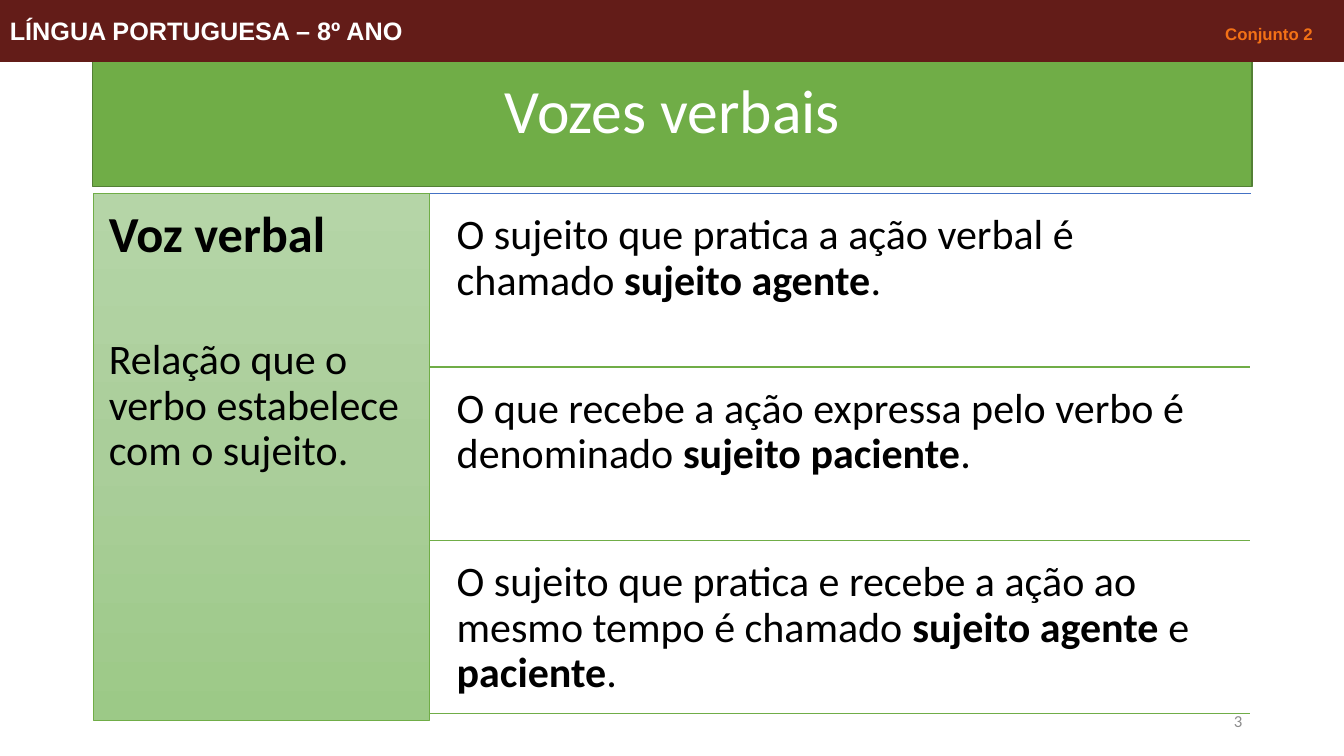
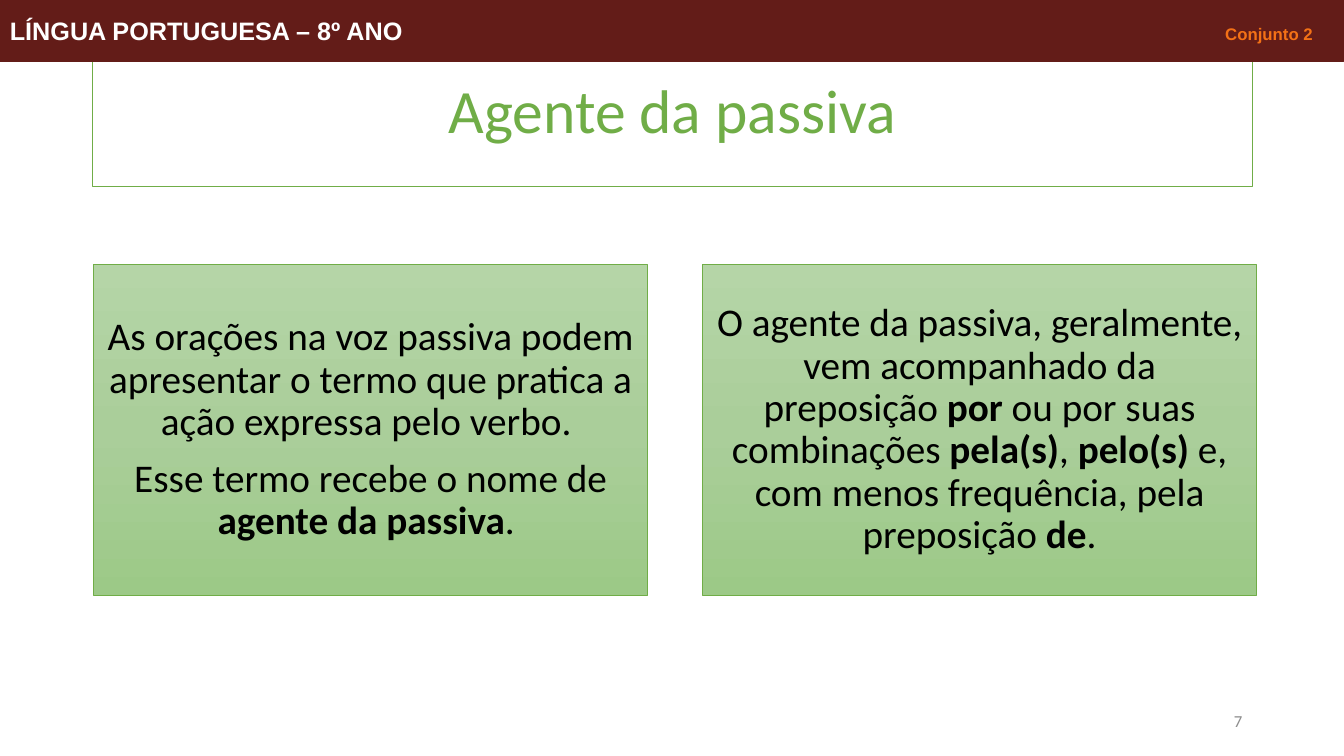
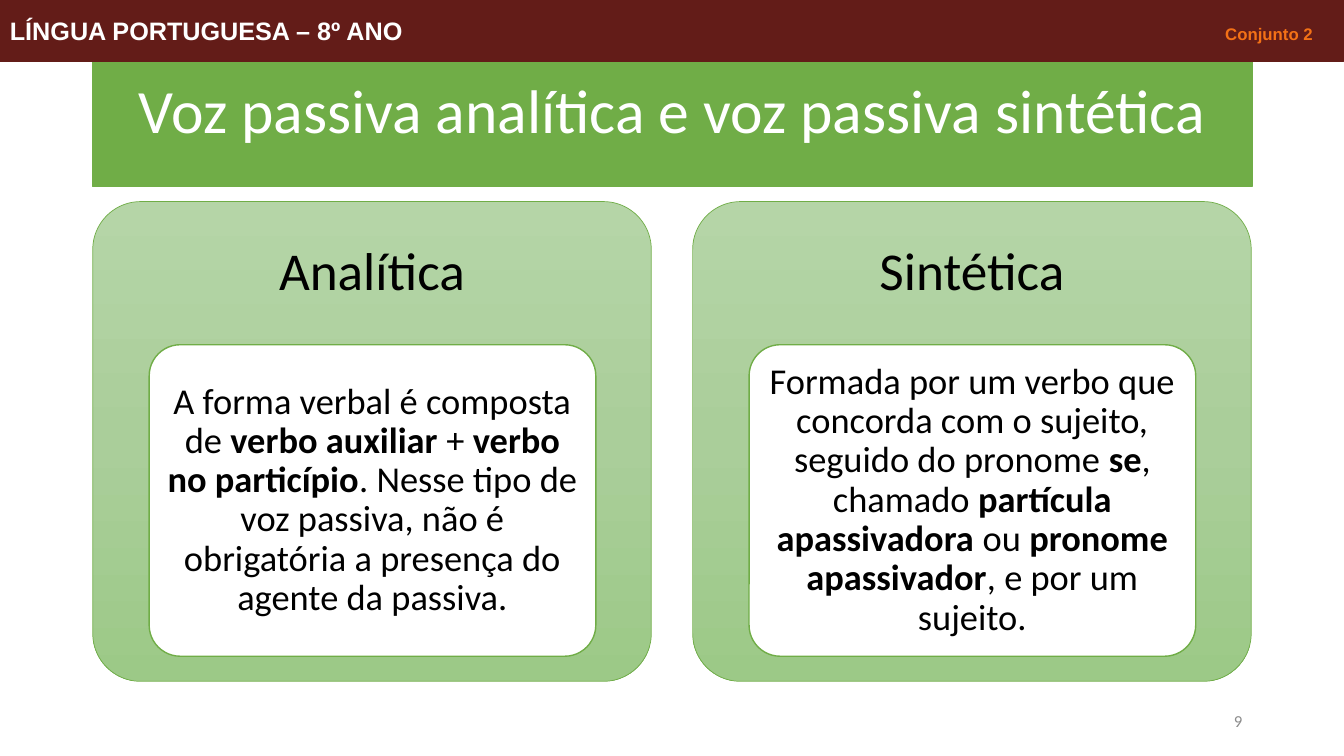
from lxml.etree import SubElement
from pptx import Presentation
from pptx.dml.color import RGBColor
from pptx.enum.shapes import MSO_CONNECTOR as Connector, MSO_SHAPE as Shape
from pptx.enum.text import MSO_ANCHOR as Anchor, PP_ALIGN as Align
from pptx.oxml.ns import qn
from pptx.util import Pt

PX = 9144
WIDTH, HEIGHT = 1333, 750
COLORS = {
    "band": "631C18",
    "set": "F47116",
    "green": "70AD47",
    "dark_green": "538035",
    "blue": "4472C4",
    "number": "8C8C8C",
    "white": "FFFFFF",
    "black": "000000",
}
CARD_STOPS = {0: "B5D5A7", 50000: "AACE9A", 100000: "9CC987"}


def rgb(name):
    return RGBColor.from_string(COLORS[name])


def emu(*lengths):
    return [length * PX for length in lengths]


def fill_gradient(shape):
    shape.fill.gradient()
    shape.fill.gradient_angle = 270
    stops = shape._element.spPr.find(".//" + qn("a:gsLst"))
    stops.clear()
    for position, color in CARD_STOPS.items():
        stop = SubElement(stops, qn("a:gs"), pos=str(position))
        SubElement(stop, qn("a:srgbClr"), val=color)


def set_frame(box, inset, anchor):
    frame = box.text_frame
    frame.word_wrap = True
    frame.vertical_anchor = anchor
    frame.margin_left = frame.margin_right = inset[0] * PX
    frame.margin_top = frame.margin_bottom = inset[1] * PX


def add_panel(page, place, fill=None, line="green", weight=1, kind=Shape.RECTANGLE,
              inset=(10, 5), anchor=Anchor.MIDDLE):
    panel = page.shapes.add_shape(kind, *emu(*place))
    panel.shadow.inherit = False
    if kind == Shape.ROUNDED_RECTANGLE:
        panel.adjustments[0] = 0.1
    if fill == "card":
        fill_gradient(panel)
    elif fill:
        panel.fill.solid()
        panel.fill.fore_color.rgb = rgb(fill)
    else:
        panel.fill.background()
    panel.line.color.rgb = rgb(line)
    panel.line.width = Pt(weight)
    set_frame(panel, inset, anchor)
    return panel


def add_label(page, place, inset=(10, 5), anchor=Anchor.MIDDLE):
    label = page.shapes.add_textbox(*emu(*place))
    set_frame(label, inset, anchor)
    return label


def write(box, text, size, color="black", font="Calibri", bold=False,
          align=Align.LEFT, spacing=0.9, before=0, after=10):
    frame = box.text_frame
    para = frame.add_paragraph() if frame.text else frame.paragraphs[0]
    para.alignment = align
    para.line_spacing = spacing
    para.space_before = Pt(before)
    para.space_after = Pt(after)
    for index, part in enumerate(text.split("*")):
        if part:
            span = para.add_run()
            span.text = part
            span.font.name = font
            span.font.size = Pt(size)
            span.font.bold = bold or index % 2 == 1
            span.font.color.rgb = rgb(color)


def add_rule(page, left, right, top, color="green"):
    rule = page.shapes.add_connector(Connector.STRAIGHT, *emu(left, top, right, top))
    rule.line.color.rgb = rgb(color)
    rule.line.width = Pt(1)
    SubElement(rule._element.spPr, qn("a:effectLst"))


def add_page(deck, title, fill="green", line="green", weight=1, color="white"):
    page = deck.slides.add_slide(deck.slide_layouts[6])
    heading = add_panel(page, (92, 40, 1150, 145), fill, line, weight)
    write(heading, title, 44, color, align=Align.CENTER, after=0)
    return page


def add_frame(page, number):
    footer = add_label(page, (942, 695, 300, 40))
    write(footer, str(number), 12, "number", align=Align.RIGHT, spacing=1, after=0)
    band = add_panel(page, (0, 0, WIDTH, 61), "band", "band", 0.75)
    write(band, "LÍNGUA PORTUGUESA – 8º ANO", 18, "white", "Arial", True, spacing=1, after=0)
    label = add_label(page, (1112, 3, 200, 61))
    write(label, "Conjunto 2", 12, "set", "Arial", True, Align.RIGHT, spacing=1, after=0)


def build_voices(deck):
    page = add_page(deck, "Vozes verbais", line="dark_green")
    add_rule(page, 93, 1241, 192, "blue")
    side = add_panel(page, (93, 192, 333, 523), "card", weight=0.5,
                     inset=(15, 15), anchor=Anchor.TOP)
    write(side, "Voz verbal", 36, bold=True)
    write(side, "Relação que o verbo estabelece com o sujeito.", 30, before=44)
    rows = [
        "O sujeito que pratica a ação verbal é chamado *sujeito agente*.",
        "O que recebe a ação expressa pelo verbo é denominado *sujeito paciente*.",
        "O sujeito que pratica e recebe a ação ao mesmo tempo é chamado "
        "*sujeito agente* e *paciente*.",
    ]
    for index, text in enumerate(rows):
        top = 200 + 172 * index
        write(add_label(page, (441, top, 799, 164), (12, 12), Anchor.TOP), text, 30)
        add_rule(page, 426, 1240, top + 164)
    add_frame(page, 3)


def build_agent(deck):
    page = add_page(deck, "Agente da passiva", fill=None, weight=0.75, color="green")
    cards = [
        ["As orações na voz passiva podem apresentar o termo que pratica a ação "
         "expressa pelo verbo. ",
         "Esse termo recebe o nome de *agente da passiva*. "],
        ["O agente da passiva, geralmente, vem acompanhado da preposição *por* ou por "
         "suas combinações *pela(s)*, *pelo(s)* e, com menos frequência, pela "
         "preposição *de*."],
    ]
    for index, texts in enumerate(cards):
        card = add_panel(page, (93 + 604 * index, 262, 549, 329), "card",
                         weight=0.5, inset=(12, 12))
        for text in texts:
            write(card, text, 28, align=Align.CENTER)
    add_frame(page, 7)


def build_passive_forms(deck):
    page = add_page(deck, "Voz passiva analítica e voz passiva sintética")
    forms = {
        "Analítica": "A forma verbal é composta de *verbo auxiliar* + *verbo no "
                     "particípio*. Nesse tipo de voz passiva, não é obrigatória a "
                     "presença do agente da passiva.",
        "Sintética": "Formada por um verbo que concorda com o sujeito, seguido do "
                     "pronome *se*, chamado *partícula apassivadora* ou *pronome "
                     "apassivador*, e por um sujeito.",
    }
    for index, (name, text) in enumerate(forms.items()):
        left = 92 + 595 * index
        add_panel(page, (left, 200, 554, 476), "card", weight=0.5,
                  kind=Shape.ROUNDED_RECTANGLE)
        heading = add_label(page, (left, 200, 554, 143), (16, 16))
        write(heading, name, 38, align=Align.CENTER)
        detail = add_panel(page, (left + 56, 342, 443, 309), "white",
                           kind=Shape.ROUNDED_RECTANGLE, inset=(7, 5))
        write(detail, text, 26, align=Align.CENTER)
    add_frame(page, 9)


def main():
    deck = Presentation()
    deck.slide_width, deck.slide_height = emu(WIDTH, HEIGHT)
    build_voices(deck)
    build_agent(deck)
    build_passive_forms(deck)
    deck.save("out.pptx")


if __name__ == "__main__":
    main()
